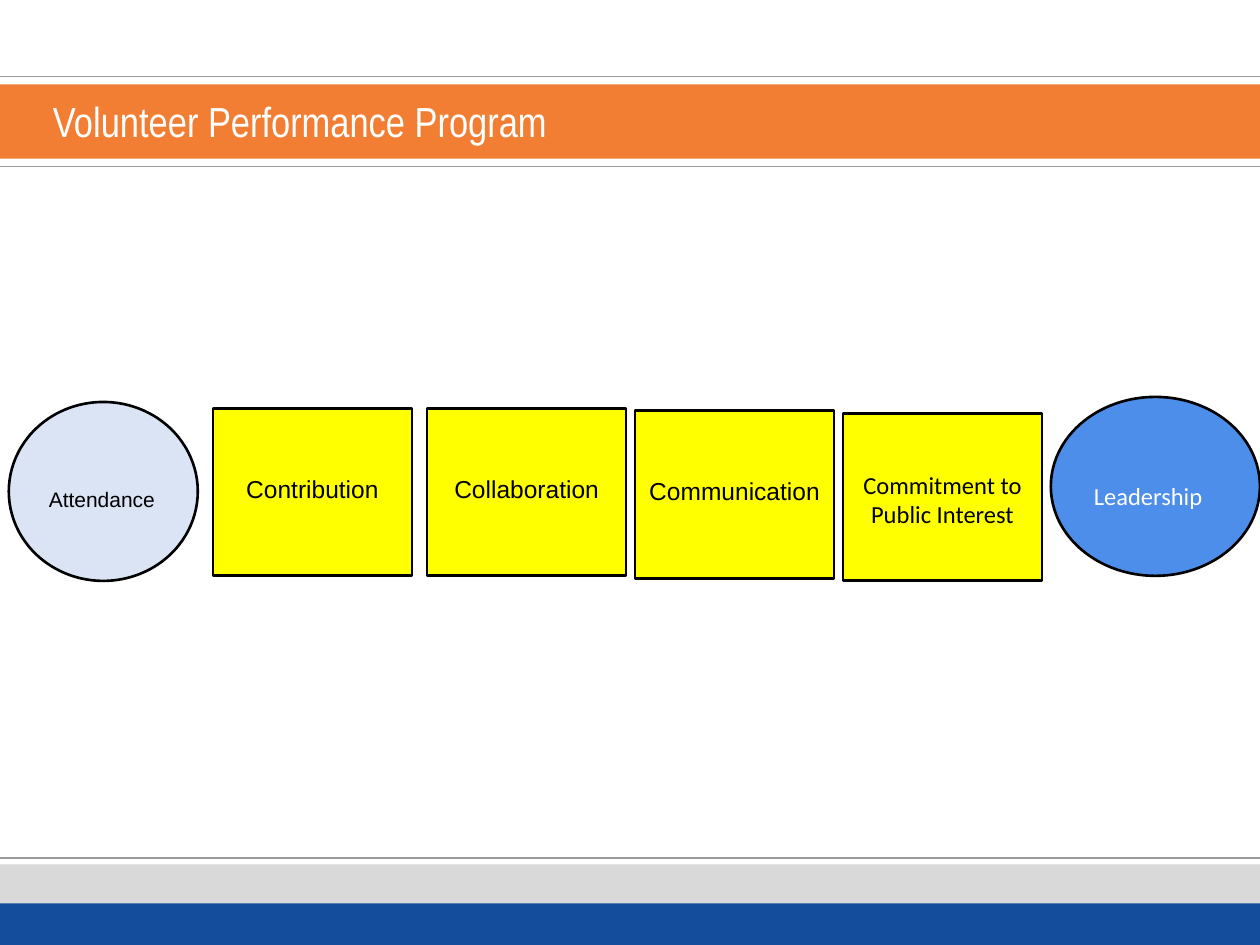
from pptx import Presentation
from pptx.dml.color import RGBColor
from pptx.enum.shapes import MSO_CONNECTOR, MSO_SHAPE
from pptx.enum.text import MSO_ANCHOR, PP_ALIGN
from pptx.oxml.ns import qn
from pptx.util import Inches, Pt
from lxml.etree import SubElement

BLACK = RGBColor(0x00, 0x00, 0x00)
WHITE = RGBColor(0xFF, 0xFF, 0xFF)
GRAY = RGBColor(0xD9, 0xD9, 0xD9)
RULE_GRAY = RGBColor(0x99, 0x9B, 0x9D)
ORANGE = RGBColor(0xF1, 0x7E, 0x32)
NAVY = RGBColor(0x13, 0x4D, 0x9C)
PALE_BLUE = RGBColor(0xDA, 0xE4, 0xF4)
BRIGHT_BLUE = RGBColor(0x4C, 0x8E, 0xE9)
YELLOW = RGBColor(0xFF, 0xFF, 0x00)


class SlideBuilder:
    line_width = Pt(1.5)
    rule_width = Pt(0.75)
    side_inset = 0.1

    def __init__(self, page):
        self.page = page

    def label(self, shape, text, font, size, color, align, anchor, side, top):
        frame = shape.text_frame
        frame_format = {
            "word_wrap": True,
            "vertical_anchor": anchor,
            "margin_left": Inches(side),
            "margin_right": Inches(side),
            "margin_top": Inches(top),
            "margin_bottom": 0,
        }
        for name, value in frame_format.items():
            setattr(frame, name, value)
        para = frame.paragraphs[0]
        para.alignment = align
        span = para.add_run()
        span.text = text
        for name, value in {"name": font, "size": Pt(size), "bold": False}.items():
            setattr(span.font, name, value)
        span.font.color.rgb = color

    def shape(self, kind, left, top, width, height, fill):
        shape = self.page.shapes.add_shape(
            kind, Inches(left), Inches(top), Inches(width), Inches(height))
        shape.shadow.inherit = False
        shape.fill.solid()
        shape.fill.fore_color.rgb = fill
        shape.line.fill.background()
        return shape

    def band(self, top, height, fill):
        self.shape(MSO_SHAPE.RECTANGLE, 0, top, 10, height, fill)

    def rule(self, top):
        rule = self.page.shapes.add_connector(
            MSO_CONNECTOR.STRAIGHT, 0, Inches(top), Inches(10.04), Inches(top))
        rule.line.color.rgb = RULE_GRAY
        rule.line.width = self.rule_width
        SubElement(rule._element.spPr, qn("a:effectLst"))

    def title(self, text):
        title = self.page.shapes.title
        place = {"left": 0.42, "top": 0.67, "width": 8.25, "height": 0.58}
        for name, value in place.items():
            setattr(title, name, Inches(value))
        self.label(title, text, "Arial Narrow", 24, WHITE,
                   PP_ALIGN.LEFT, MSO_ANCHOR.MIDDLE, 0, 0)
        self.page.shapes._spTree.append(title._element)

    def stage(self, kind, place, fill, text, font, size, color, align, text_top):
        stage = self.shape(kind, *place, fill)
        stage.line.color.rgb = BLACK
        stage.line.width = self.line_width
        self.label(stage, text, font, size, color, align,
                   MSO_ANCHOR.TOP, self.side_inset, text_top)

    def oval(self, place, fill, text, font, size, color):
        self.stage(MSO_SHAPE.OVAL, place, fill, text, font, size, color,
                   PP_ALIGN.LEFT, 0.46)

    def box(self, left, top, text, font, text_top):
        self.stage(MSO_SHAPE.RECTANGLE, (left, top, 1.58, 1.33), YELLOW,
                   text, font, 14, BLACK, PP_ALIGN.CENTER, text_top)


def main():
    deck = Presentation()
    deck.slide_width = Inches(10)
    deck.slide_height = Inches(7.5)
    builder = SlideBuilder(deck.slides.add_slide(deck.slide_layouts[5]))

    for top, height, fill in ((6.86, 0.64, GRAY), (0.67, 0.59, ORANGE), (7.17, 0.33, NAVY)):
        builder.band(top, height, fill)
    for top in (0.61, 1.32, 6.81):
        builder.rule(top)
    builder.title("Volunteer Performance Program")

    builder.oval((0.07, 3.19, 1.5, 1.42), PALE_BLUE, "Attendance", "Arial", 12, BLACK)
    for left, top, text, font, text_top in (
        (1.69, 3.24, "Contribution", "Arial", 0.52),
        (3.39, 3.24, "Collaboration", "Arial", 0.52),
        (5.04, 3.26, "Communication", "Arial", 0.52),
        (6.69, 3.28, "Commitment to Public Interest", "Calibri", 0.45),
    ):
        builder.box(left, top, text, font, text_top)
    builder.oval((8.34, 3.15, 1.66, 1.42), BRIGHT_BLUE, "Leadership", "Calibri", 14, WHITE)

    deck.save("out.pptx")


if __name__ == "__main__":
    main()
